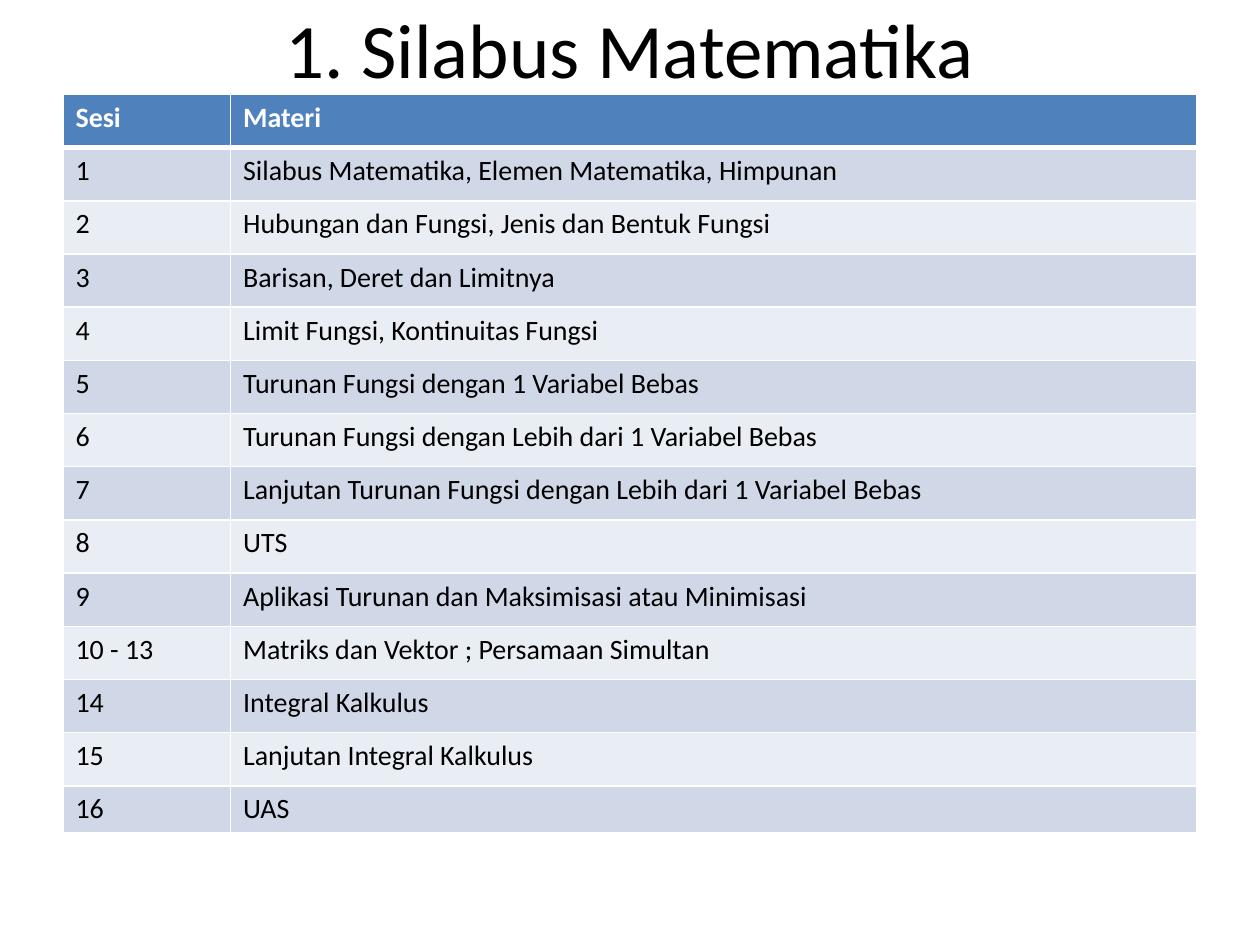
import pptx
import pptx.dml.color
import pptx.enum.text
import pptx.oxml
import pptx.oxml.ns
import pptx.util
from pptx.util import Inches

# Content
TITLE = "1. Silabus Matematika"
HEADER = ("Sesi", "Materi")
SESSIONS = [
    ("1", "Silabus Matematika, Elemen Matematika, Himpunan"),
    ("2", "Hubungan dan Fungsi, Jenis dan Bentuk Fungsi"),
    ("3", "Barisan, Deret dan Limitnya"),
    ("4", "Limit Fungsi, Kontinuitas Fungsi"),
    ("5", "Turunan Fungsi dengan 1 Variabel Bebas"),
    ("6", "Turunan Fungsi dengan Lebih dari 1 Variabel Bebas"),
    ("7", "Lanjutan Turunan Fungsi dengan Lebih dari 1 Variabel Bebas"),
    ("8", "UTS"),
    ("9", "Aplikasi Turunan dan Maksimisasi atau Minimisasi"),
    ("10 - 13", "Matriks dan Vektor ; Persamaan Simultan"),
    ("14", "Integral Kalkulus"),
    ("15", "Lanjutan Integral Kalkulus"),
    ("16", "UAS"),
]

# Format
FONT = "Calibri"
BLACK, WHITE = "000000", "FFFFFF"
HEADER_FILL = "4F81BD"
BAND_FILLS = ("D0D8E8", "E9EDF4")
LEFT, TABLE_TOP, WIDTH, TABLE_HEIGHT = 0.5, 0.75, 9, 5.86
SESSION_WIDTH = 1.33
LAST_ROW_HEIGHT = 0.37


def color(hex_string):
    return pptx.dml.color.RGBColor.from_string(hex_string)


def write_text(frame, text, size=16, font_color=BLACK, bold=False,
               align=pptx.enum.text.PP_ALIGN.LEFT):
    paragraph = frame.paragraphs[0]
    paragraph.alignment = align
    run = paragraph.add_run()
    run.text = text
    run.font.name = FONT
    run.font.size = pptx.util.Pt(size)
    run.font.bold = bold
    run.font.color.rgb = color(font_color)


def set_borders(cell, **widths):
    """Draw white cell borders; widths are points by side name."""
    properties = cell._tc.get_or_add_tcPr()
    for position, (side, width) in enumerate(widths.items()):
        properties.insert(position, pptx.oxml.parse_xml(
            f'<a:{side} {pptx.oxml.ns.nsdecls("a")} w="{pptx.util.Pt(width)}">'
            f'<a:solidFill><a:srgbClr val="{WHITE}"/></a:solidFill></a:{side}>'))


def add_title(slide):
    box = slide.shapes.add_textbox(
        Inches(LEFT), Inches(-0.25), Inches(WIDTH), Inches(1.25))
    box.text_frame.word_wrap = True
    box.text_frame.vertical_anchor = pptx.enum.text.MSO_ANCHOR.MIDDLE
    write_text(box.text_frame, TITLE, size=44,
               align=pptx.enum.text.PP_ALIGN.CENTER)


def add_syllabus(slide):
    rows = [HEADER] + SESSIONS
    table = slide.shapes.add_table(
        len(rows), len(HEADER), Inches(LEFT), Inches(TABLE_TOP),
        Inches(WIDTH), Inches(TABLE_HEIGHT)).table
    table.columns[0].width = Inches(SESSION_WIDTH)
    table.columns[1].width = Inches(WIDTH - SESSION_WIDTH)

    # Equal rows, with a shorter last one
    row_height = (TABLE_HEIGHT - LAST_ROW_HEIGHT) / len(SESSIONS)
    for row in table.rows:
        row.height = Inches(row_height)
    table.rows[len(SESSIONS)].height = Inches(LAST_ROW_HEIGHT)

    for row_index, texts in enumerate(rows):
        is_header = row_index == 0
        fill = HEADER_FILL if is_header else BAND_FILLS[(row_index - 1) % 2]
        for column_index, text in enumerate(texts):
            cell = table.cell(row_index, column_index)
            cell.fill.solid()
            cell.fill.fore_color.rgb = color(fill)
            set_borders(cell, lnL=1, lnR=1, lnT=3 if row_index == 1 else 1,
                        lnB=3 if is_header else 1)
            write_text(cell.text_frame, text, bold=is_header,
                       font_color=WHITE if is_header else BLACK)


def main():
    presentation = pptx.Presentation()
    presentation.slide_width = Inches(10)
    presentation.slide_height = Inches(7.5)
    slide = presentation.slides.add_slide(presentation.slide_layouts[6])
    add_title(slide)
    add_syllabus(slide)
    presentation.save("out.pptx")


if __name__ == "__main__":
    main()
